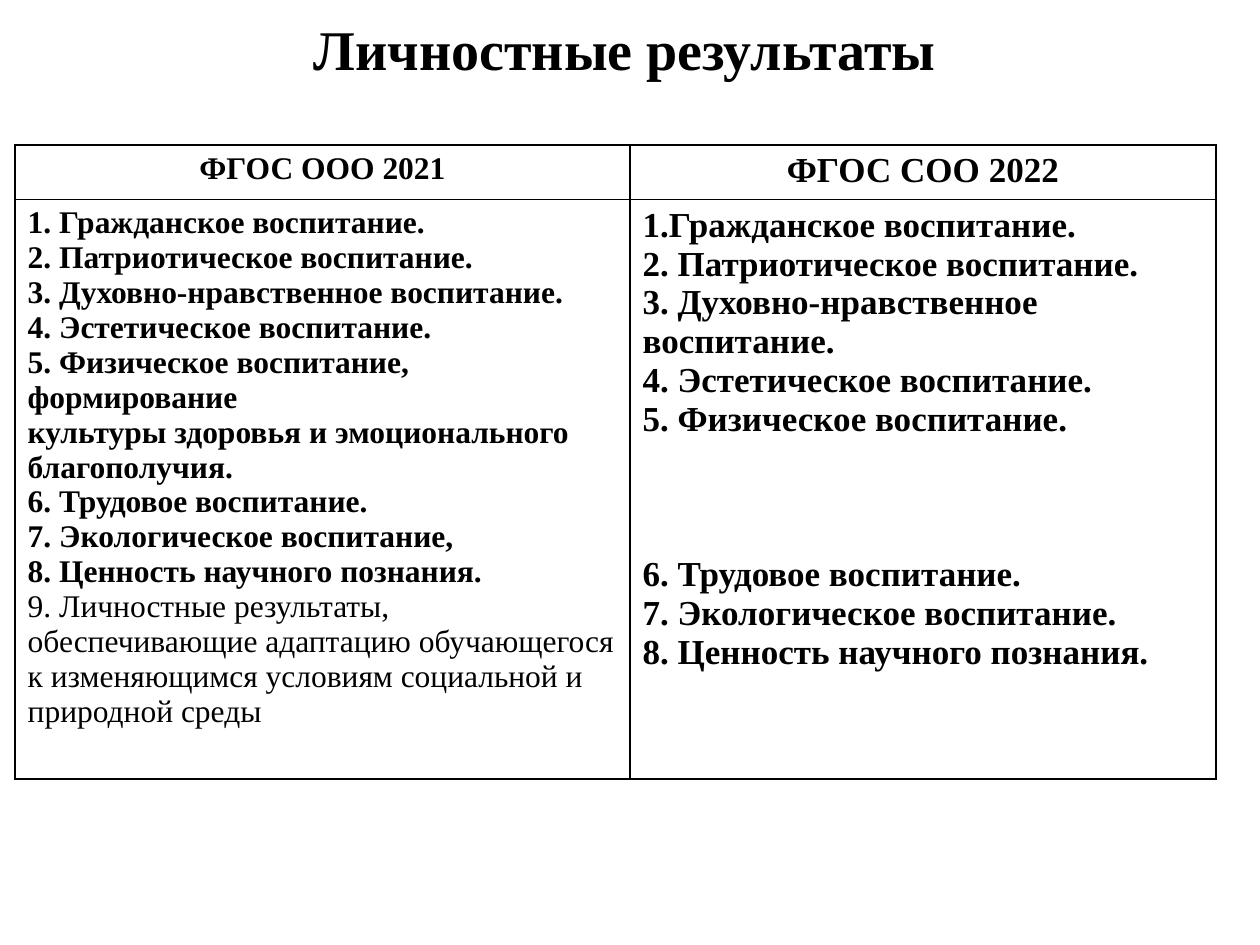
from lxml import etree
from pptx import Presentation
from pptx.dml.color import RGBColor
from pptx.enum.text import MSO_ANCHOR, PP_ALIGN
from pptx.oxml.ns import qn
from pptx.util import Inches, Pt

CENTER, LEFT, MIDDLE = PP_ALIGN.CENTER, PP_ALIGN.LEFT, MSO_ANCHOR.MIDDLE
FONT = "Times New Roman"
BLACK = "000000"

TITLE = "Личностные результаты"
COLUMNS = [
    {
        "header": "ФГОС ООО 2021",
        "width": 4.88,
        "size": 18,
        "items": [
            "1. Гражданское воспитание.",
            "2. Патриотическое воспитание.",
            "3. Духовно-нравственное воспитание.",
            "4. Эстетическое воспитание.",
            "5. Физическое воспитание, формирование",
            "культуры здоровья и эмоционального",
            "благополучия.",
            "6. Трудовое воспитание.",
            "7. Экологическое воспитание,",
            "8. Ценность научного познания.",
        ],
        "plain": [
            "9. Личностные результаты, обеспечивающие адаптацию обучающегося "
            "к изменяющимся условиям социальной и природной среды",
        ],
        "gaps": {},
    },
    {
        "header": "ФГОС СОО 2022",
        "width": 4.65,
        "size": 20,
        "items": [
            "1.Гражданское воспитание.",
            "2. Патриотическое воспитание.",
            "3. Духовно-нравственное воспитание.",
            "4. Эстетическое воспитание.",
            "5. Физическое воспитание.",
            "6. Трудовое воспитание.",
            "7. Экологическое воспитание.",
            "8. Ценность научного познания.",
        ],
        "plain": [],
        "gaps": {5: 66.5},
    },
]
ROW_HEIGHTS = [0.41, 4.26]


def color(value):
    return RGBColor.from_string(value)


def style(para, size, bold=True, align=LEFT):
    para.alignment = align
    for span in para.runs:
        span.font.name = FONT
        span.font.size = Pt(size)
        span.font.bold = bold
        span.font.color.rgb = color(BLACK)


def add_borders(cell):
    properties = cell._tc.get_or_add_tcPr()
    for index, side in enumerate(("lnL", "lnR", "lnT", "lnB")):
        line = etree.Element(qn(f"a:{side}"), w=str(Pt(1)))
        fill = etree.SubElement(line, qn("a:solidFill"))
        etree.SubElement(fill, qn("a:srgbClr"), val=BLACK)
        properties.insert(index, line)


deck = Presentation()
deck.slide_width, deck.slide_height = Inches(10), Inches(7.5)
page = deck.slides.add_slide(deck.slide_layouts[6])

box = page.shapes.add_textbox(Inches(0.51), 0, Inches(8.9), Inches(0.77))
frame = box.text_frame
frame.word_wrap = True
frame.vertical_anchor = MIDDLE
frame.text = TITLE
style(frame.paragraphs[0], 32, align=CENTER)

table = page.shapes.add_table(
    len(ROW_HEIGHTS), len(COLUMNS), Inches(0.12), Inches(1.15),
    Inches(sum(column["width"] for column in COLUMNS)), Inches(sum(ROW_HEIGHTS)),
).table
for row, height in zip(table.rows, ROW_HEIGHTS):
    row.height = Inches(height)

for index, column in enumerate(COLUMNS):
    table.columns[index].width = Inches(column["width"])
    header, body = table.cell(0, index), table.cell(1, index)
    header.text_frame.text = column["header"]
    style(header.text_frame.paragraphs[0], column["size"], align=CENTER)

    body.text_frame.text = "\n".join(column["items"] + column["plain"])
    for number, para in enumerate(body.text_frame.paragraphs):
        style(para, column["size"], bold=number < len(column["items"]))
        para.space_before = Pt(column["gaps"].get(number, 0))

    for cell in (header, body):
        cell.fill.background()
        add_borders(cell)

deck.save("out.pptx")
